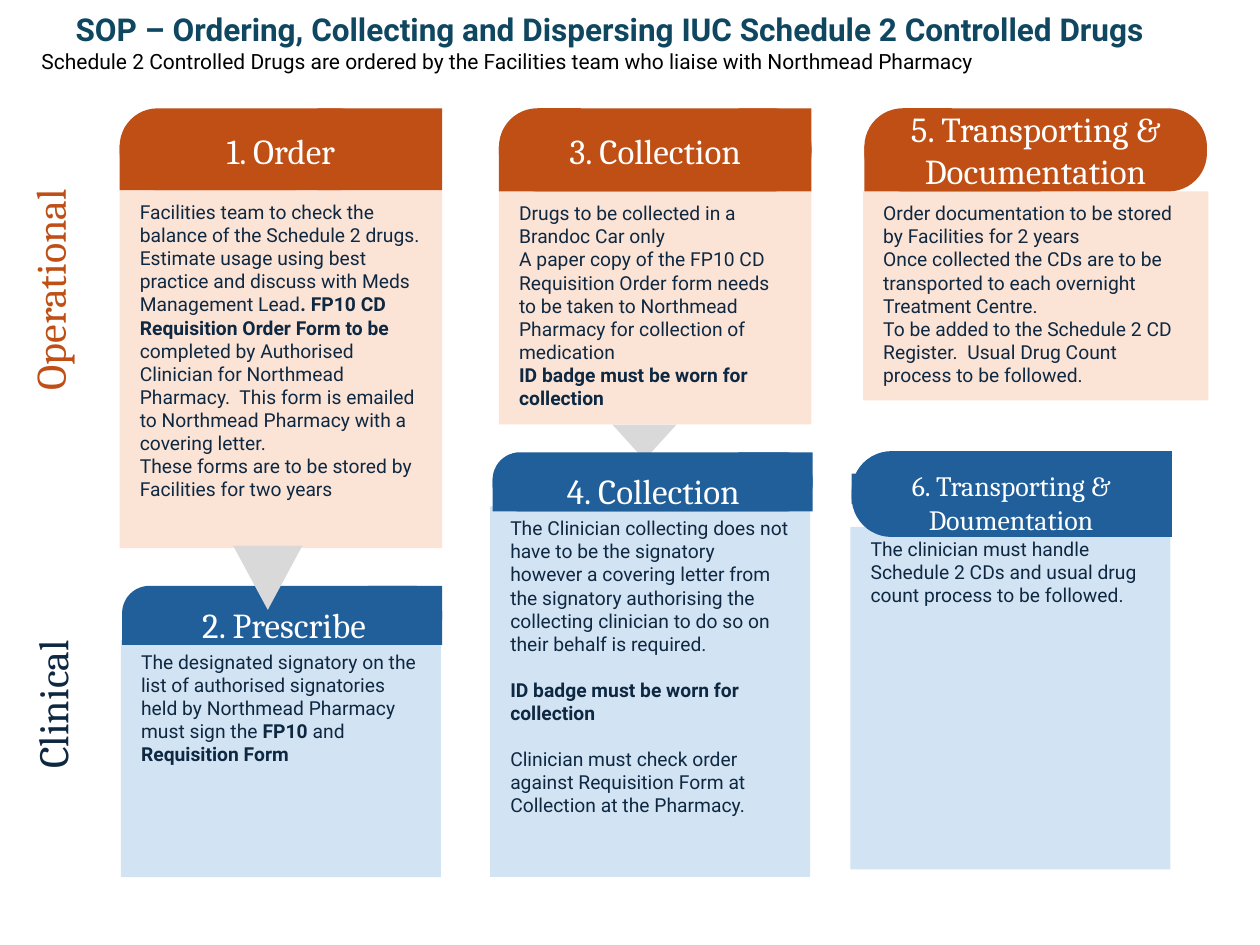
from pptx import Presentation
from pptx.dml.color import RGBColor
from pptx.enum import shapes, text
from pptx.util import Pt

ORANGE, PEACH = "C04F15", "FBE3D6"
BLUE, PALE = "215F9A", "D2E3F3"
NAVY, TEAL, GREY, WHITE, BLACK = "0E2841", "0F4761", "D9D9D9", "FFFFFF", "000000"
SANS, SERIF = "Roboto", "Cambria"
KIND = shapes.MSO_SHAPE
LEFT, CENTER = text.PP_ALIGN.LEFT, text.PP_ALIGN.CENTER
TOP, MIDDLE = text.MSO_ANCHOR.TOP, text.MSO_ANCHOR.MIDDLE


def colour(value):
    return RGBColor.from_string(value)


class Page:
    def __init__(self, deck):
        self.slide = deck.slides.add_slide(deck.slide_layouts[5])

    def fill_text(self, box, paragraphs, size, font, ink, align=LEFT, anchor=TOP, inset=(7.2, 3.6)):
        frame = box.text_frame
        frame.word_wrap = True
        frame.auto_size = text.MSO_AUTO_SIZE.NONE
        frame.vertical_anchor = anchor
        frame.margin_left = frame.margin_right = Pt(inset[0])
        frame.margin_top = frame.margin_bottom = Pt(inset[1])
        for index, words in enumerate(paragraphs):
            para = frame.add_paragraph() if index else frame.paragraphs[0]
            para.alignment = align
            for part, piece in enumerate(words.split("**")):
                if piece:
                    span = para.add_run()
                    span.text = piece
                    span.font.size = Pt(size)
                    span.font.name = font
                    span.font.bold = part % 2 == 1
                    span.font.color.rgb = colour(ink)
        return frame

    def title(self, area, words):
        box = self.slide.shapes.title
        box.left, box.top, box.width, box.height = map(Pt, area)
        para = self.fill_text(box, [f"**{words}**"], 18, SANS, TEAL).paragraphs[0]
        para.line_spacing = 1.07
        para.space_before, para.space_after = Pt(8), Pt(4)

    def label(self, area, words, size, font, ink, align=CENTER, turn=0):
        box = self.slide.shapes.add_textbox(*map(Pt, area))
        box.rotation = turn
        self.fill_text(box, [words], size, font, ink, align)

    def block(self, area, fill, kind=KIND.RECTANGLE, turn=0):
        box = self.slide.shapes.add_shape(kind, *map(Pt, area))
        box.shadow.inherit = False
        box.fill.solid()
        box.fill.fore_color.rgb = colour(fill)
        box.line.fill.background()
        box.rotation = turn
        return box

    def body(self, area, fill, paragraphs, gap=0):
        box = self.block(area, fill)
        frame = self.fill_text(box, paragraphs, 11, SANS, NAVY, inset=(11.5, 5.75))
        for para in frame.paragraphs[1:]:
            para.space_before = Pt(gap)

    def header(self, base, rounded, cap_width, fill, right=None):
        self.block(base, fill)
        box = self.block(rounded, fill, KIND.ROUNDED_RECTANGLE)
        box.adjustments[0] = 0.463
        left, top, width, height = rounded
        if cap_width:
            end = right or left + width
            self.block((end - cap_width, top, cap_width, height), fill)
        return box

    def arrow(self, area):
        self.block(area, GREY, KIND.ISOSCELES_TRIANGLE, 180)


def main():
    deck = Presentation()
    deck.slide_width, deck.slide_height = Pt(720), Pt(540)
    page = Page(deck)

    page.title((36, 0.7, 637.2, 29.5),
               "SOP – Ordering, Collecting and Dispersing IUC Schedule 2 Controlled Drugs")
    page.label((16.6, 24.5, 686.2, 21.6),
               "Schedule 2 Controlled Drugs are ordered by the Facilities team who liaise with Northmead Pharmacy",
               12, SANS, BLACK, LEFT)
    page.label((-72.7, 384.5, 204.5, 36), "Clinical", 24, SERIF, NAVY, turn=270)
    page.label((-64.8, 147.6, 185.8, 36), "Operational", 24, SERIF, ORANGE, turn=270)

    page.body((69.1, 365.8, 182.9, 135.4), PALE, [
        "The designated signatory on the list of authorised signatories held by Northmead "
        "Pharmacy must sign the **FP10** and **Requisition Form**"])
    page.header((69.8, 349.9, 140.4, 18.7), (69.8, 334.8, 182.9, 33.8), 42.5, BLUE)
    page.label((72, 341.3, 180.7, 31.7), "2. Prescribe", 20, SERIF, WHITE)

    page.body((68.4, 108.7, 184.3, 204.5), PEACH, [
        "Facilities team to check the balance of the Schedule 2 drugs. Estimate usage using best "
        "practice and discuss with Meds Management Lead**. FP10 CD Requisition Order Form to be "
        "**completed by Authorised Clinician for Northmead Pharmacy.  This form is emailed to "
        "Northmead Pharmacy with a covering letter.",
        "These forms are to be stored by Facilities for two years"])
    page.header((68.4, 82.8, 100.8, 25.9), (68.4, 61.9, 146.9, 46.8), 71.3, ORANGE, right=252.7)
    page.label((68.4, 70.6, 184.3, 31.7), "1. Order", 20, SERIF, WHITE)

    page.body((285.1, 109.4, 178.6, 133.2), PEACH, [
        "Drugs to be collected in a Brandoc Car only",
        "A paper copy of the FP10 CD Requisition Order form needs to be taken to Northmead "
        "Pharmacy for collection of medication",
        "**ID badge must be worn for collection**"])
    page.header((285.1, 83.5, 136.8, 25.9), (285.1, 61.9, 178.6, 47.5), 41.8, ORANGE)
    page.label((285.1, 70.6, 178.6, 31.7), "3. Collection", 20, SERIF, WHITE)

    page.body((493.2, 109.4, 197.3, 119.5), PEACH, [
        "Order documentation to be stored by Facilities for 2 years",
        "Once collected the CDs are to be transported to each overnight Treatment Centre.",
        "To be added to the Schedule 2 CD Register.  Usual Drug Count process to be followed."])
    heading = page.header((493.9, 83.5, 100.8, 25.9), (493.9, 61.9, 195.8, 47.5), 0, ORANGE)
    page.fill_text(heading, ["5. Transporting & Documentation"], 20, SERIF, WHITE, CENTER, MIDDLE)

    page.arrow((133.2, 311.8, 39.6, 36.7))
    page.arrow((349.9, 242.6, 36.7, 20.2))

    page.body((280.1, 289.4, 182.9, 211.7), PALE, [
        "The Clinician collecting does not have to be the signatory however a covering letter from "
        "the signatory authorising the collecting clinician to do so on their behalf is required.",
        "**ID badge must be worn for collection**",
        "Clinician must check order against Requisition Form at Collection at the Pharmacy."],
        gap=13)
    page.header((281.5, 273.6, 140.4, 18.7), (281.5, 258.5, 182.9, 33.8), 42.5, BLUE)
    page.label((283, 265, 180.7, 31.7), "4. Collection", 20, SERIF, WHITE)

    page.body((486, 301, 182.9, 195.8), PALE, [
        "The clinician must handle Schedule 2 CDs and usual drug count process to be followed."])
    page.header((486.7, 270.7, 140.4, 17.3), (486.7, 257.8, 182.9, 49), 42.5, BLUE)
    page.label((486.7, 264.2, 182.2, 46.1), "6. Transporting & Doumentation", 16, SERIF, WHITE)

    deck.save("out.pptx")


if __name__ == "__main__":
    main()
